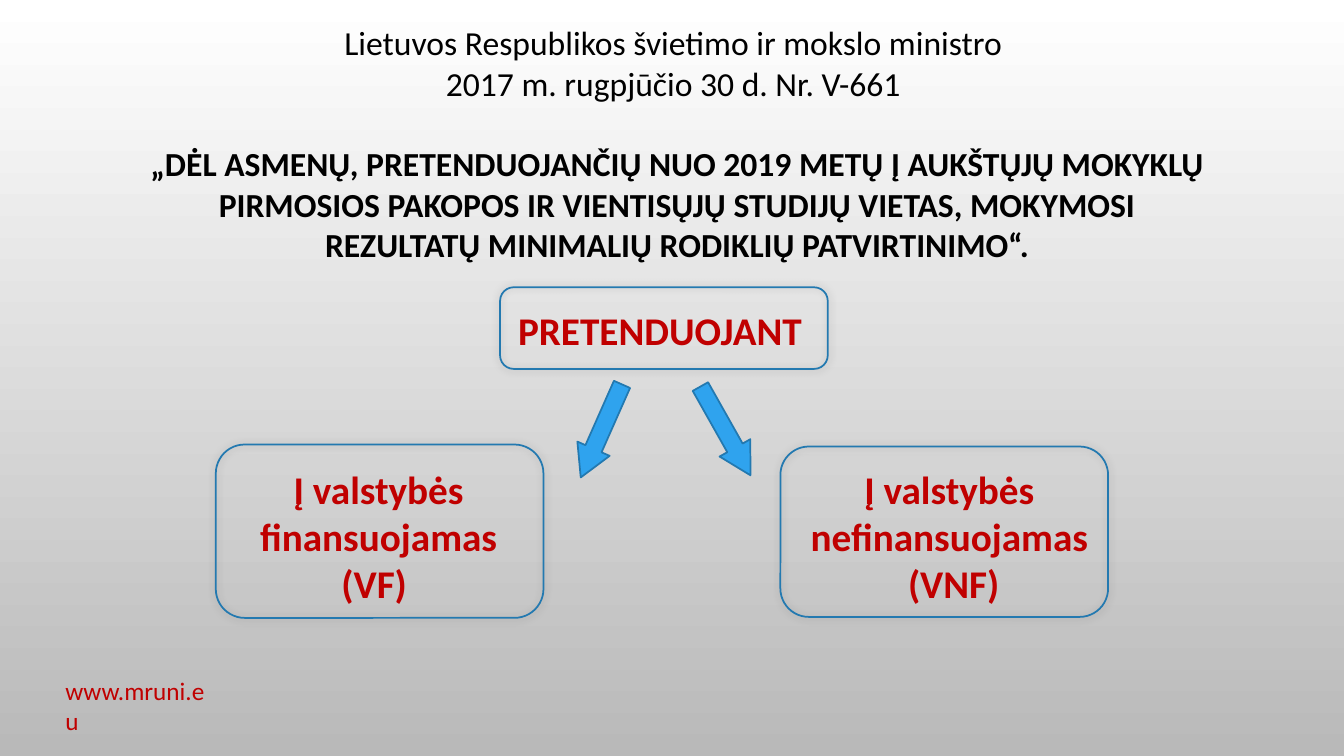
from dataclasses import dataclass

from lxml import etree
from pptx import Presentation, util as u
from pptx.dml.color import RGBColor
from pptx.enum import shapes, text
from pptx.oxml import ns

PX = 9144  # EMU in one px: 100 px to the inch


@dataclass(frozen=True)
class Theme:
    font: str = "Calibri"
    top: str = "FFFFFF"
    bottom: str = "B9B9B9"
    ink: str = "000000"
    accent: str = "C00000"
    outline: str = "2379B0"
    arrow: str = "2FA3EE"
    shadow: str = "000000"
    link_size: int = 18
    title_size: int = 24
    label_size: int = 28
    line_width: float = 1.25


@dataclass(frozen=True)
class Area:
    left: int
    top: int
    width: int
    height: int

    def emu(self) -> tuple[int, ...]:
        return tuple(n * PX for n in (self.left, self.top, self.width, self.height))


@dataclass(frozen=True)
class Label:
    area: Area
    lines: tuple[str, ...]
    size: int
    color: str
    bold: bool = True
    centered: bool = True


@dataclass(frozen=True)
class Arrow:
    area: Area
    rotation: float


THEME = Theme()

FRAMES = (
    Area(214, 441, 325, 172),
    Area(774, 443, 325, 169),
    Area(496, 285, 325, 81),
)

TITLE = Label(
    Area(134, 17, 1075, 252),
    (
        "Lietuvos Respublikos švietimo ir mokslo ministro ",
        "2017 m. rugpjūčio 30 d. Nr. V-661 ",
        "„DĖL ASMENŲ, PRETENDUOJANČIŲ NUO 2019 METŲ Į AUKŠTŲJŲ MOKYKLŲ "
        "PIRMOSIOS PAKOPOS IR VIENTISŲJŲ STUDIJŲ VIETAS, MOKYMOSI "
        "REZULTATŲ MINIMALIŲ RODIKLIŲ PATVIRTINIMO“.",
    ),
    THEME.title_size, THEME.ink, bold=False,
)

LABELS = (
    Label(Area(55, 665, 158, 40), ("www.mruni.eu",),
          THEME.link_size, THEME.accent, bold=False, centered=False),
    Label(Area(241, 457, 269, 151), ("Į valstybės", "finansuojamas", "(VF) "),
          THEME.label_size, THEME.accent),
    Label(Area(787, 457, 309, 151), ("Į valstybės", "nefinansuojamas", " (VNF)"),
          THEME.label_size, THEME.accent),
    Label(Area(504, 299, 325, 57), ("PRETENDUOJANT",),
          THEME.label_size, THEME.accent, centered=False),
)

ARROWS = (
    Arrow(Area(702, 377, 35, 101), 330.6),
    Arrow(Area(579, 377, 35, 101), 23.9),
)


def rgb(color: str) -> RGBColor:
    return RGBColor.from_string(color)


def paint_background(page) -> None:
    fill = page.background.fill
    fill.gradient()
    fill.gradient_angle = 270
    for stop, position, color in zip(fill.gradient_stops, (0, 1), (THEME.top, THEME.bottom)):
        stop.position = position
        stop.color.rgb = rgb(color)


def add_outlined(page, kind, area: Area):
    shape = page.shapes.add_shape(kind, *area.emu())
    shape.shadow.inherit = False
    shape.line.color.rgb = rgb(THEME.outline)
    shape.line.width = u.Pt(THEME.line_width)
    return shape


def add_frame(page, area: Area) -> None:
    frame = add_outlined(page, shapes.MSO_SHAPE.ROUNDED_RECTANGLE, area)
    frame.fill.background()
    effects = frame.element.spPr.find(ns.qn("a:effectLst"))
    shadow = etree.SubElement(effects, ns.qn("a:outerShdw"), blurRad=str(u.Pt(6)),
                              dist="0", dir="13500000", rotWithShape="0")
    color = etree.SubElement(shadow, ns.qn("a:srgbClr"), val=THEME.shadow)
    etree.SubElement(color, ns.qn("a:alpha"), val="20000")


def add_arrow(page, arrow: Arrow) -> None:
    shape = add_outlined(page, shapes.MSO_SHAPE.DOWN_ARROW, arrow.area)
    shape.adjustments[0] = 0.5
    shape.adjustments[1] = 0.89
    shape.rotation = arrow.rotation
    shape.fill.solid()
    shape.fill.fore_color.rgb = rgb(THEME.arrow)


def add_label(page, label: Label):
    box = page.shapes.add_textbox(*label.area.emu())
    frame = box.text_frame
    frame.word_wrap = True
    frame.text = "\n".join(label.lines)
    for para in frame.paragraphs:
        para.alignment = text.PP_ALIGN.CENTER if label.centered else text.PP_ALIGN.LEFT
        for span in para.runs:
            span.font.name = THEME.font
            span.font.size = u.Pt(label.size)
            span.font.bold = label.bold
            span.font.color.rgb = rgb(label.color)
    return box


def main() -> None:
    deck = Presentation()
    deck.slide_width, deck.slide_height = 1333 * PX, 750 * PX
    page = deck.slides.add_slide(deck.slide_layouts[6])
    paint_background(page)

    # Title: the order's name stands apart in bold
    heading = add_label(page, TITLE).text_frame.paragraphs[-1]
    heading.space_before = u.Pt(29)
    heading.runs[0].font.bold = True

    # Diagram: frames, their labels and the arrows between them
    for area in FRAMES:
        add_frame(page, area)
    for label in LABELS:
        add_label(page, label)
    for arrow in ARROWS:
        add_arrow(page, arrow)

    deck.save("out.pptx")


if __name__ == "__main__":
    main()
